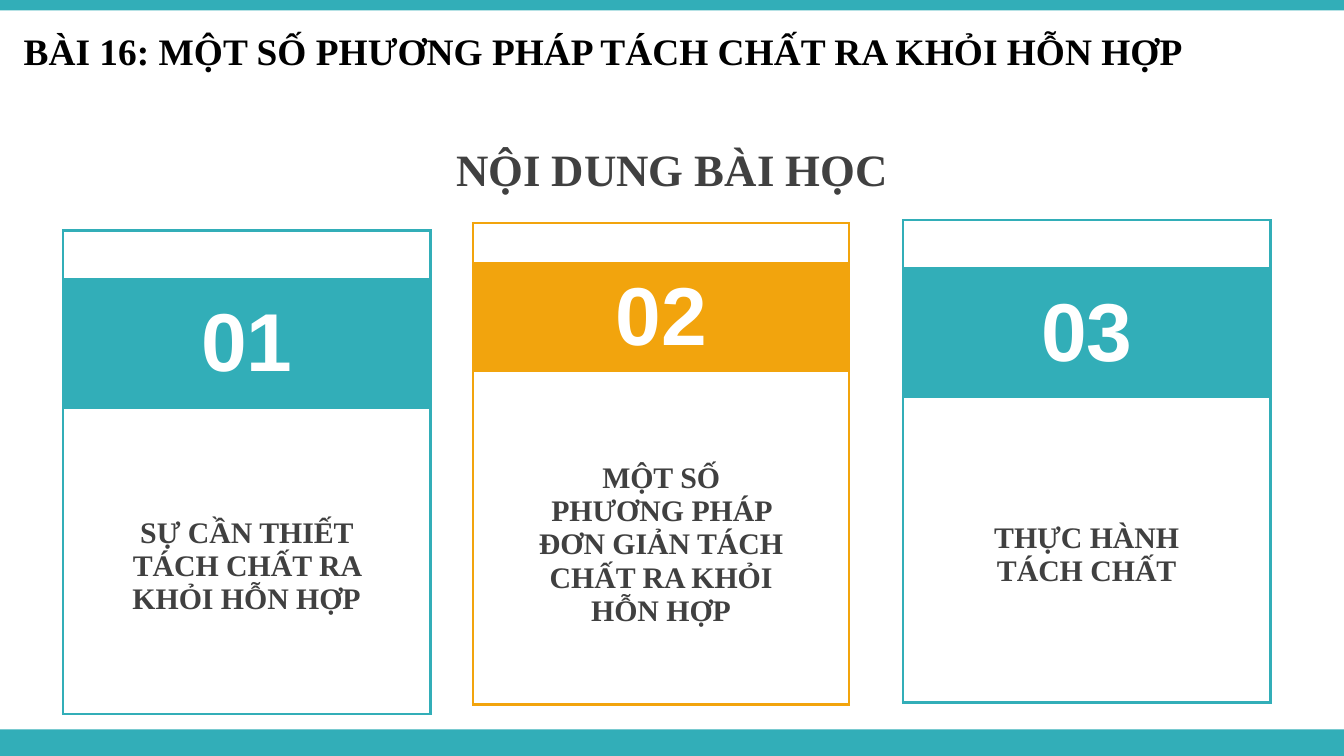
from lxml.etree import SubElement
from pptx import Presentation
from pptx.dml.color import RGBColor
from pptx.enum.shapes import MSO_SHAPE
from pptx.enum.text import MSO_ANCHOR, MSO_AUTO_SIZE, PP_ALIGN
from pptx.oxml.ns import qn
from pptx.util import Pt

COLORS = {
    "teal": "32AEB8",
    "orange": "F2A40D",
    "white": "FFFFFF",
    "gray": "404040",
    "black": "000000",
}
SERIF, SANS = "Times New Roman", "Arial"
SLIDE_W, SLIDE_H = 720, 405
PLAIN_TABLE = "{2D5ABB26-0587-4C30-8999-92F81FD0307C}"

# Each card: box (left, top, width, height), cap, band and line heights
CARDS = [
    ("01", "SỰ CẦN THIẾT TÁCH CHẤT RA KHỎI HỖN HỢP", "teal",
     (33.8, 123.6, 196.8, 259), 25.2, 70.4, 30.2),
    ("02", "MỘT SỐ PHƯƠNG PHÁP ĐƠN GIẢN TÁCH CHẤT RA KHỎI HỖN HỢP", "orange",
     (253.4, 119.5, 201.6, 258), 21, 59, 28),
    ("03", "THỰC HÀNH TÁCH CHẤT", "teal",
     (483.8, 118, 196.8, 258.5), 25.2, 70.2, 30.2),
]


def rgb(name):
    return RGBColor.from_string(COLORS[name])


def write(frame, text, font_name, size, color, align):
    frame.text = text
    paragraph = frame.paragraphs[0]
    paragraph.alignment = align
    font = paragraph.runs[0].font
    font.name, font.size, font.bold = font_name, Pt(size), True
    font.color.rgb = rgb(color)


def add_bar(slide, top, height):
    bar = slide.shapes.add_shape(
        MSO_SHAPE.RECTANGLE, 0, Pt(top), Pt(SLIDE_W), Pt(height))
    bar.shadow.inherit = False
    bar.fill.solid()
    bar.fill.fore_color.rgb = rgb("teal")
    bar.line.fill.background()


def fill_heading(holder, box, text, size, color, align):
    holder.left, holder.top, holder.width, holder.height = map(Pt, box)
    frame = holder.text_frame
    frame.word_wrap = True
    frame.auto_size = MSO_AUTO_SIZE.NONE
    frame.vertical_anchor = MSO_ANCHOR.MIDDLE
    write(frame, text, SERIF, size, color, align)
    paragraph = frame.paragraphs[0]
    paragraph.space_before = Pt(0)
    properties = paragraph._p.get_or_add_pPr()
    properties.set("marL", "0")
    properties.set("indent", "0")
    SubElement(properties, qn("a:buNone"))


def draw_edges(cell, sides, color):
    properties = cell._tc.get_or_add_tcPr()
    for side in sides:
        line = SubElement(properties, qn(f"a:ln{side}"), w=str(Pt(1.5)))
        solid = SubElement(line, qn("a:solidFill"))
        SubElement(solid, qn("a:srgbClr"), val=COLORS[color])


def add_card(slide, number, topic, color, box, cap, band, line):
    width, height = box[2:]
    side = 0.128 * width
    columns = [side, width - 2 * side, side]
    rest = height - 2 * cap - band - 3 * line
    rows = [cap, band, line, line, line, rest, cap]
    last_row, last_column = len(rows) - 1, len(columns) - 1

    frame = slide.shapes.add_table(len(rows), len(columns), *map(Pt, box))
    table = frame.table
    table.first_row = table.horz_banding = False
    table._tbl.tblPr.find(qn("a:tableStyleId")).text = PLAIN_TABLE
    for column, size in zip(table.columns, columns):
        column.width = Pt(size)
    for row, size in zip(table.rows, rows):
        row.height = Pt(size)

    # Outer frame, fills and small empty lines
    full_rows = (0, 1, last_row)
    for r in range(len(rows)):
        for c in range(len(columns)):
            cell = table.cell(r, c)
            sides = [name for name, on in (
                ("L", c == 0),
                ("R", c == last_column or r in full_rows and c == 0),
                ("T", r == 0),
                ("B", r == last_row)) if on]
            draw_edges(cell, sides, color)
            cell.fill.solid()
            cell.fill.fore_color.rgb = rgb(color if r == 1 else "white")
            cell.vertical_anchor = MSO_ANCHOR.MIDDLE
            SubElement(cell.text_frame.paragraphs[0]._p,
                       qn("a:endParaRPr"), sz="800")

    for r in full_rows:
        table.cell(r, 0).merge(table.cell(r, last_column))
    table.cell(3, 1).merge(table.cell(5, 1))

    # Number and topic
    write(table.cell(1, 0).text_frame, number, SANS, 44, "white",
          PP_ALIGN.CENTER)
    write(table.cell(3, 1).text_frame, topic, SERIF, 16, "gray",
          PP_ALIGN.CENTER)


def main():
    deck = Presentation()
    deck.slide_width, deck.slide_height = Pt(SLIDE_W), Pt(SLIDE_H)
    slide = deck.slides.add_slide(deck.slide_layouts[1])

    # Top and bottom bars
    add_bar(slide, 0, 5.6)
    add_bar(slide, 390.8, SLIDE_H - 390.8)

    # Lesson title and section heading
    fill_heading(slide.shapes.title, (5.5, 11.5, 720, 31.5),
                 "BÀI 16: MỘT SỐ PHƯƠNG PHÁP TÁCH CHẤT RA KHỎI HỖN HỢP",
                 20, "black", PP_ALIGN.LEFT)
    fill_heading(slide.placeholders[1], (0, 68, SLIDE_W, 45),
                 "NỘI DUNG BÀI HỌC", 24, "gray", PP_ALIGN.CENTER)

    # Content cards
    for card in CARDS:
        add_card(slide, *card)

    deck.save("out.pptx")


if __name__ == "__main__":
    main()
